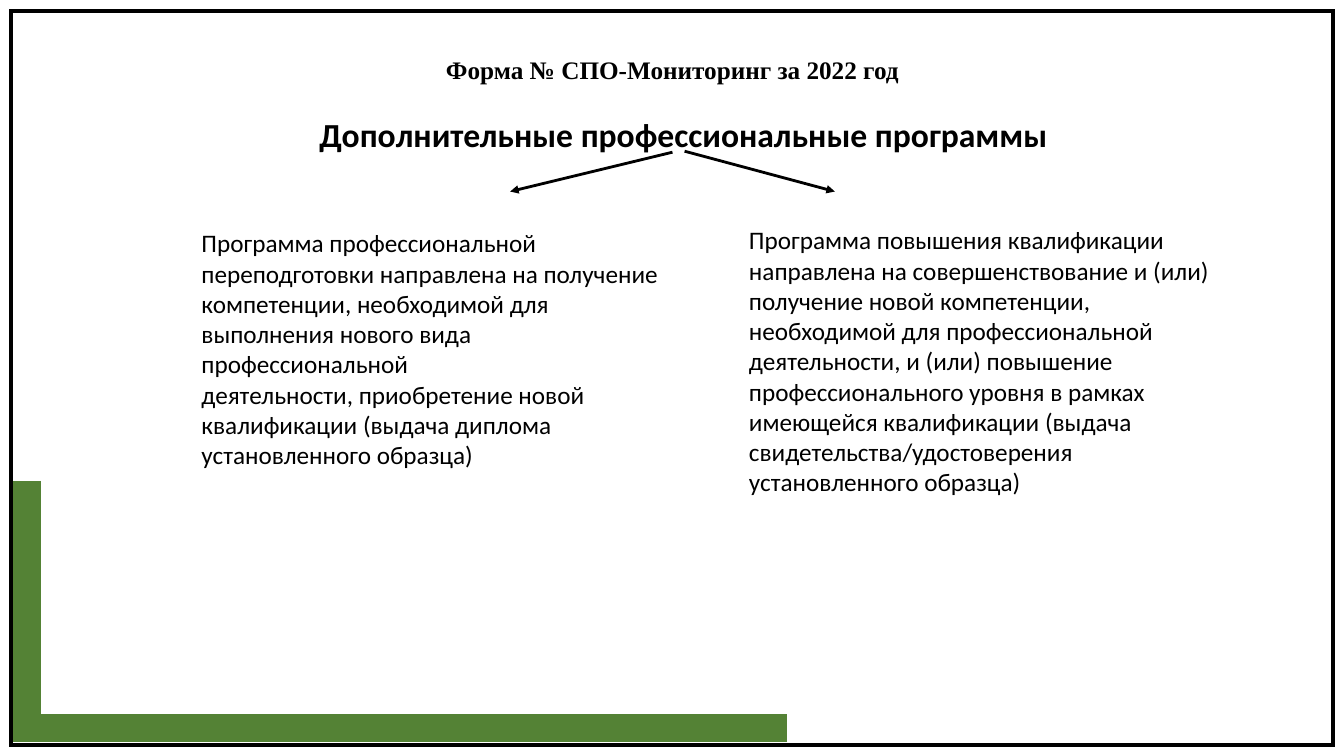
import pptx
import pptx.util
import pptx.dml.color
import pptx.enum.shapes
import pptx.enum.text
import pptx.oxml
import pptx.oxml.ns
from pptx.util import Inches

BLACK = pptx.dml.color.RGBColor(0x00, 0x00, 0x00)
GREEN = pptx.dml.color.RGBColor(0x54, 0x82, 0x35)
LEFT = pptx.enum.text.PP_ALIGN.LEFT
CENTER = pptx.enum.text.PP_ALIGN.CENTER

# text, (left, top, width, height), font, size, bold, alignment, wrap
TEXTS = [
    ("Форма № СПО-Мониторинг за 2022 год",
     (4.3, 0.49, 4.74, 0.4), "Times New Roman", 18, True, CENTER, False),
    ("Дополнительные профессиональные программы",
     (2.45, 1.08, 8.66, 0.91), "Calibri", 24, True, CENTER, True),
    ("Программа повышения квалификации\v"
     "направлена на совершенствование и (или) получение новой компетенции, "
     "необходимой для профессиональной деятельности, и (или) повышение "
     "профессионального уровня в рамках\v"
     "имеющейся квалификации (выдача свидетельства/удостоверения "
     "установленного образца)",
     (7.33, 2.18, 4.85, 3.13), "Calibri", 18, False, LEFT, True),
    ("Программа профессиональной переподготовки направлена на получение "
     "компетенции, необходимой для выполнения нового вида профессиональной\v"
     "деятельности, приобретение новой квалификации (выдача диплома "
     "установленного образца)",
     (1.9, 2.21, 4.77, 2.83), "Calibri", 18, False, LEFT, True),
]
ARROWS = [((6.67, 1.51), (5.06, 1.9)), ((6.79, 1.5), (8.28, 1.9))]
FRAME = (0.11, 0.11, 13.11, 7.28)
CORNER = [(0.27, 4.77), (0.27, 7.22), (7.81, 7.22)]


def inches(values):
    return [Inches(v) for v in values]


def set_line(shape, color, width):
    shape.line.color.rgb = color
    shape.line.width = pptx.util.Pt(width)


def add_line_child(shape, tag, **attrs):
    """Append a join or arrowhead element to the outline."""
    child = pptx.oxml.parse_xml(f"<a:{tag} {pptx.oxml.ns.nsdecls('a')}/>")
    for name, value in attrs.items():
        child.set(name, value)
    shape.line._get_or_add_ln().append(child)


def add_text(s, text, box, font, size, bold, align, wrap):
    tf = s.shapes.add_textbox(*inches(box)).text_frame
    tf.word_wrap = wrap
    tf.text = text
    p = tf.paragraphs[0]
    p.alignment = align
    for r in p.runs:
        r.font.name = font
        r.font.size = pptx.util.Pt(size)
        r.font.bold = bold
        r.font.color.rgb = BLACK


def add_arrow(s, start, end):
    line = s.shapes.add_connector(
        pptx.enum.shapes.MSO_CONNECTOR.STRAIGHT, *inches(start + end))
    set_line(line, BLACK, 2)
    add_line_child(line, "tailEnd", type="triangle")
    line._element.spPr.append(
        pptx.oxml.parse_xml(f"<a:effectLst {pptx.oxml.ns.nsdecls('a')}/>"))


prs = pptx.Presentation()
prs.slide_width, prs.slide_height = Inches(13.33), Inches(7.5)
s = prs.slides.add_slide(prs.slide_layouts[6])

frame = s.shapes.add_shape(
    pptx.enum.shapes.MSO_SHAPE.RECTANGLE, *inches(FRAME))
set_line(frame, BLACK, 3)

start, *rest = [inches(point) for point in CORNER]
builder = s.shapes.build_freeform(*start)
builder.add_line_segments(rest, close=False)
corner = builder.convert_to_shape()
set_line(corner, GREEN, 20)

for sp in (frame, corner):
    sp.fill.background()
    sp.shadow.inherit = False
    add_line_child(sp, "miter", lim="800000")

for text in TEXTS:
    add_text(s, *text)
for arrow in ARROWS:
    add_arrow(s, *arrow)

prs.save("out.pptx")
